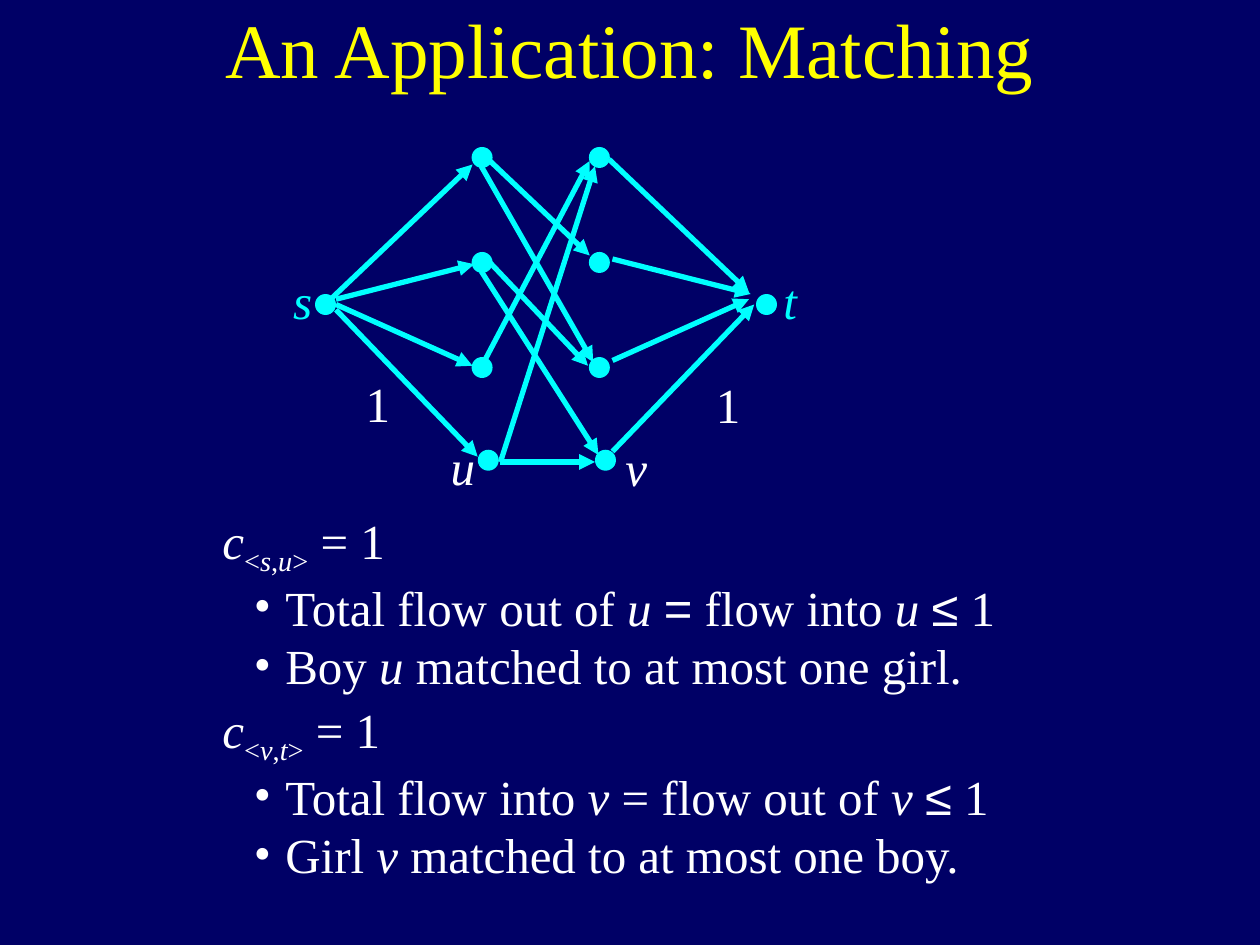
from dataclasses import dataclass
from pptx import Presentation
from pptx.dml.color import RGBColor as Rgb
from pptx.enum.shapes import MSO_CONNECTOR as Conn, MSO_SHAPE as Kind
from pptx.enum.text import MSO_ANCHOR as Anchor, PP_ALIGN as Align
from pptx.oxml.ns import qn
from pptx.util import Pt
from lxml.etree import SubElement as Sub


@dataclass(frozen=True)
class Theme:
    back: Rgb = Rgb(0, 0, 0x66)
    head: Rgb = Rgb(255, 255, 0)
    graph: Rgb = Rgb(0, 255, 255)
    ink: Rgb = Rgb(255, 255, 255)
    serif: str = "Times New Roman"
    sans: str = "Arial"
    big: int = 44
    text: int = 28
    line: int = 3
    dot: int = 12


T = Theme()

ROWS = [(269.5, 84), (269.5, 144), (269.5, 204), (273, 257)]
GAP = 67
ENDS = [(180, 168), (432, 168)]
PAIRS = [
    (275, 95, 339, 207), (279, 149, 336, 209), (277, 206, 337, 92),
    (286, 264, 340, 264), (280, 92, 337, 146), (275, 155, 342, 260),
    (286, 264, 340, 95),
]
FLOWS = [
    (192, 177, 273, 261), (192, 174, 270, 209),
    (192, 171, 271, 151), (190, 170, 270, 94),
    (350, 258, 431, 174), (350, 206, 428, 171),
    (350, 148, 429, 168), (348, 91, 428, 167),
]
LABELS = [
    ("s", 160.5, 151, 25, T.graph, True), ("t", 440.5, 151, 22, T.graph, True),
    ("1", 201.5, 209.5, 29, T.ink, False), ("1", 401.5, 210, 29, T.ink, False),
    ("u", 250, 245.5, 29, T.ink, True), ("v", 350, 246, 27, T.ink, True),
]
NOTES = [
    (288, "s", "u", [
        [("Total flow out of ", ""), ("u ", "i"), ("=", "a"),
         (" flow into ", ""), ("u ", "i"), ("≤", "a"), (" 1", "")],
        [("Boy ", ""), ("u", "i"), (" matched to at most one girl.", "")],
    ]),
    (396, "v", "t", [
        [("Total flow into ", ""), ("v ", "i"), ("= flow out of ", ""),
         ("v ", "i"), ("≤", "a"), (" 1", "")],
        [("Girl ", ""), ("v ", "i"), ("matched to at most one boy.", "")],
    ]),
]


def style(item, **vals):
    for key, val in vals.items():
        setattr(item, key, val)


def add_run(para, text, mode="", color=T.ink, size=T.text):
    run = para.add_run()
    run.text = text
    style(run.font, name=T.sans if "a" in mode else T.serif,
          size=Pt(size), italic="i" in mode)
    run.font.color.rgb = color
    if "b" in mode:
        run.font._element.set("baseline", "-25000")


def add_title(slide, text):
    box = slide.shapes.title
    style(box, left=Pt(54), top=Pt(-18), width=Pt(612), height=Pt(90))
    box.text_frame.vertical_anchor = Anchor.MIDDLE
    para = box.text_frame.paragraphs[0]
    para.alignment = Align.CENTER
    add_run(para, text, color=T.head, size=T.big)


def add_edge(slide, *ends):
    edge = slide.shapes.add_connector(Conn.STRAIGHT, *map(Pt, ends))
    edge.line.width = Pt(T.line)
    edge.line.color.rgb = T.graph
    Sub(edge.line._get_or_add_ln(), qn("a:tailEnd"), type="triangle")
    Sub(edge._element.spPr, qn("a:effectLst"))


def add_dot(slide, left, top):
    dot = slide.shapes.add_shape(Kind.OVAL, *map(Pt, (left, top, T.dot, T.dot)))
    dot.shadow.inherit = False
    dot.fill.solid()
    dot.fill.fore_color.rgb = T.graph
    dot.line.fill.background()


def add_label(slide, text, left, top, width, color, slant):
    box = slide.shapes.add_textbox(*map(Pt, (left, top, width, 41)))
    style(box.text_frame, word_wrap=True, vertical_anchor=Anchor.BOTTOM,
          margin_left=0, margin_right=0)
    para = box.text_frame.paragraphs[0]
    para.alignment = Align.CENTER
    add_run(para, text, "i" if slant else "", color)


def add_note(slide, top, start, end, points):
    box = slide.shapes.add_textbox(*map(Pt, (120, top, 467, 108)))
    frame = box.text_frame
    frame.word_wrap = True
    first = frame.paragraphs[0]
    for text, mode in [("c", "i"), ("<", "b"), (start, "bi"), (",", "b"),
                       (end, "bi"), (">", "b"), (" = 1", "")]:
        add_run(first, text, mode)
    for runs in points:
        para = frame.add_paragraph()
        para.level = 1
        props = para._p.get_or_add_pPr()
        props.set("marL", str(Pt(36)))
        props.set("indent", str(Pt(-18)))
        Sub(props, qn("a:buFont"), typeface=T.serif)
        Sub(props, qn("a:buChar"), char="•")
        for text, mode in runs:
            add_run(para, text, mode)


def main():
    deck = Presentation()
    style(deck, slide_width=Pt(720), slide_height=Pt(540))
    slide = deck.slides.add_slide(deck.slide_layouts[5])
    slide.background.fill.solid()
    slide.background.fill.fore_color.rgb = T.back
    add_title(slide, "An Application: Matching")
    for ends in PAIRS:
        add_edge(slide, *ends)
    for left, top in ROWS:
        add_dot(slide, left, top)
        add_dot(slide, left + GAP, top)
    for spot in ENDS:
        add_dot(slide, *spot)
    for ends in FLOWS:
        add_edge(slide, *ends)
    for label in LABELS:
        add_label(slide, *label)
    for note in NOTES:
        add_note(slide, *note)
    deck.save("out.pptx")


if __name__ == "__main__":
    main()
